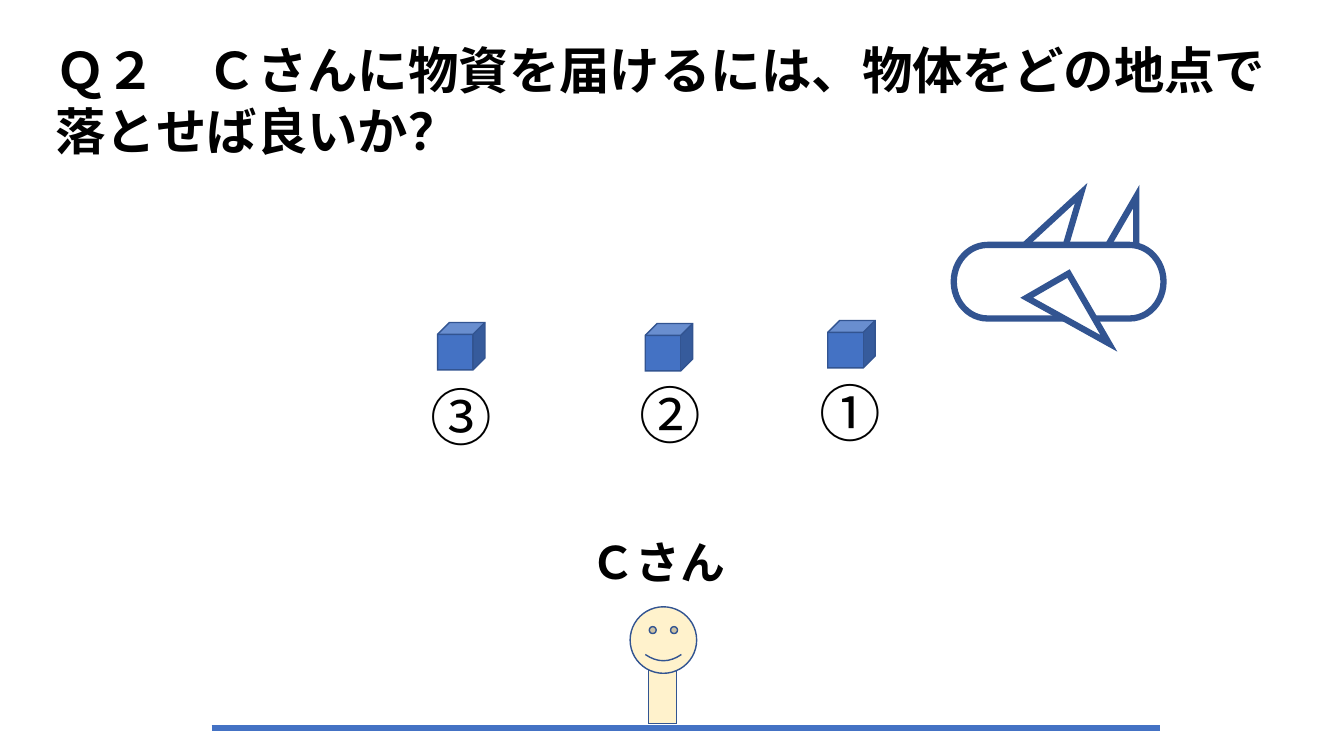
from dataclasses import dataclass

from lxml.etree import SubElement
from pptx import Presentation
from pptx.dml.color import RGBColor
from pptx.enum.shapes import MSO_CONNECTOR as Connector, MSO_SHAPE as Shape
from pptx.enum.text import MSO_ANCHOR as Anchor, MSO_AUTO_SIZE as AutoSize, PP_ALIGN as Align
from pptx.oxml.ns import qn
from pptx.util import Inches, Pt


@dataclass(frozen=True)
class Theme:
    font: str = "Noto Sans CJK JP"
    text: str = "000000"
    blue: str = "4472C4"
    outline: str = "325491"
    skin: str = "FFF2CC"
    white: str = "FFFFFF"
    title_size: int = 36
    name_size: int = 32
    number_size: int = 44
    thin: float = 1
    thick: float = 4.5


THEME = Theme()

# Boxes are left, top, width, height in inches.
TITLE = ("Ｑ２　Ｃさんに物資を届けるには、物体をどの地点で落とせば良いか？", (0.45, 0.34, 12.69, 1.31))
PERSON_NAME = ("Ｃさん", (5.76, 5.26, 1.55, 0.64))
GROUND = (2.1, 11.51, 7.22)  # left, right, height
PERSON = [
    (Shape.FLOWCHART_PROCESS, (6.43, 6.49, 0.28, 0.69)),
    (Shape.SMILEY_FACE, (6.25, 6.02, 0.66, 0.66)),
]
# Shape, box, rotation, flipped vertically
PLANE = [
    (Shape.RIGHT_TRIANGLE, (10.14, 1.83, 0.48, 0.8), 196.4, True),
    (Shape.RIGHT_TRIANGLE, (10.98, 1.95, 0.29, 0.5), 180, True),
    (Shape.FLOWCHART_TERMINATOR, (9.46, 2.43, 2.08, 0.73), 0, False),
    (Shape.RIGHT_TRIANGLE, (10.35, 2.78, 0.48, 0.8), 150, False),
]
# Label, label left and top, cube left and top
DROP_POINTS = [
    ("①", (8.03, 3.67), (8.21, 3.18)),
    ("②", (6.24, 3.69), (6.4, 3.21)),
    ("③", (4.17, 3.71), (4.34, 3.2)),
]
NUMBER_SIZE = (0.82, 0.84)
CUBE_SIZE = (0.47, 0.47)


def place(shape, box):
    for name, value in zip(("left", "top", "width", "height"), box):
        setattr(shape, name, Inches(value))


def write(shape, text, size, bold=True, wrap=False):
    frame = shape.text_frame
    frame_format = {"word_wrap": wrap, "auto_size": AutoSize.SHAPE_TO_FIT_TEXT,
                    "vertical_anchor": Anchor.TOP}
    for name, value in frame_format.items():
        setattr(frame, name, value)
    paragraph = frame.paragraphs[0]
    paragraph.alignment = Align.LEFT
    run = paragraph.add_run()
    run.text = text
    for name, value in {"name": THEME.font, "size": Pt(size), "bold": bold}.items():
        setattr(run.font, name, value)
    run.font.color.rgb = RGBColor.from_string(THEME.text)
    # East Asian glyphs take their typeface from a:ea
    SubElement(run.font._element, qn("a:ea"), typeface=THEME.font)


def add_text(slide, text, box, size, bold=True):
    write(slide.shapes.add_textbox(*map(Inches, box)), text, size, bold)


def draw(shapes, kind, box, fill, width, rotation=0, flipped=False):
    shape = shapes.add_shape(kind, *map(Inches, box))
    shape.shadow.inherit = False
    shape.rotation = rotation
    shape.fill.solid()
    shape.fill.fore_color.rgb = RGBColor.from_string(fill)
    shape.line.color.rgb = RGBColor.from_string(THEME.outline)
    shape.line.width = Pt(width)
    properties = shape.element.spPr
    SubElement(properties.find(qn("a:ln")), qn("a:miter"), lim="800000")
    if flipped:
        properties.find(qn("a:xfrm")).set("flipV", "1")


def draw_ground(slide):
    left, right, height = map(Inches, GROUND)
    ground = slide.shapes.add_connector(Connector.STRAIGHT, left, height, right, height)
    ground.line.color.rgb = RGBColor.from_string(THEME.blue)
    ground.line.width = Pt(THEME.thick)
    SubElement(ground.element.spPr, qn("a:effectLst"))


def main():
    presentation = Presentation()
    presentation.slide_width = Inches(13.33)
    presentation.slide_height = Inches(7.5)
    slide = presentation.slides.add_slide(presentation.slide_layouts.get_by_name("Title Only"))

    title, title_box = TITLE
    place(slide.shapes.title, title_box)
    write(slide.shapes.title, title, THEME.title_size, wrap=True)

    draw_ground(slide)
    person = slide.shapes.add_group_shape()
    for kind, box in PERSON:
        draw(person.shapes, kind, box, THEME.skin, THEME.thin)
    add_text(slide, *PERSON_NAME, THEME.name_size)

    plane = slide.shapes.add_group_shape()
    for kind, box, rotation, flipped in PLANE:
        draw(plane.shapes, kind, box, THEME.white, THEME.thick, rotation, flipped)

    for number, number_corner, cube_corner in DROP_POINTS:
        draw(slide.shapes, Shape.CUBE, cube_corner + CUBE_SIZE, THEME.blue, THEME.thin)
        add_text(slide, number, number_corner + NUMBER_SIZE, THEME.number_size, bold=False)

    presentation.save("out.pptx")


if __name__ == "__main__":
    main()
